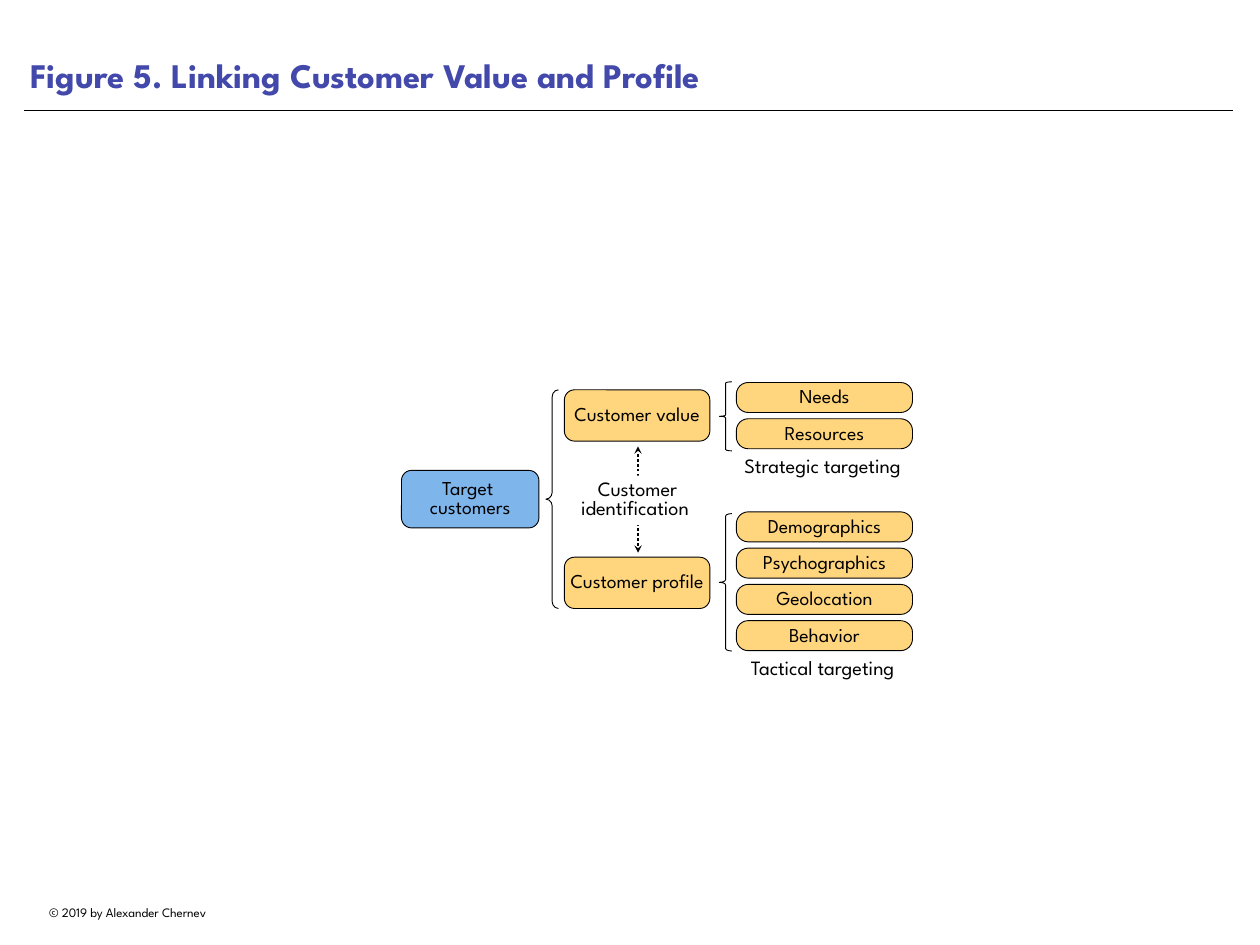
from lxml.etree import SubElement
from pptx import Presentation
from pptx.dml.color import RGBColor
from pptx.enum.shapes import MSO_CONNECTOR as Connector, MSO_SHAPE as Shape
from pptx.enum.text import MSO_ANCHOR as Anchor, PP_ALIGN as Align
from pptx.oxml.ns import qn
from pptx.util import Cm, Pt

COLORS = {"ink": "000000", "title": "4349AA", "target": "7EB5EA", "box": "FFD67E", "paper": "FFFFFF"}
FONT = "League Spartan"
LEAF_PITCH = 1.04
LEAF_GROUPS = [
    (10.97, ["Needs", "Resources"]),
    (14.68, ["Demographics", "Psychographics", "Geolocation", "Behavior"]),
]


def color(name):
    """Return the named colour."""
    return RGBColor.from_string(COLORS[name])


def write_text(shape, text, size=16, ink="ink", bold=False, align=Align.CENTER,
               anchor=Anchor.MIDDLE, spacing=0.8, inset=0, wrap=True):
    """Fill a shape with one formatted paragraph per line of text."""
    frame = shape.text_frame
    frame.word_wrap = wrap
    frame.vertical_anchor = anchor
    frame.margin_left = frame.margin_right = Cm(inset)
    frame.margin_top = frame.margin_bottom = Cm(inset)
    frame.text = text
    for paragraph in frame.paragraphs:
        paragraph.alignment = align
        paragraph.line_spacing = spacing
        font = paragraph.runs[0].font
        font.name, font.size, font.bold = FONT, Pt(size), bold
        font.color.rgb = color(ink)


def add_label(slide, text, left, top, width, height, **text_format):
    """Add a text box."""
    label = slide.shapes.add_textbox(Cm(left), Cm(top), Cm(width), Cm(height))
    write_text(label, text, **text_format)


def add_figure(slide, kind, left, top, width, height, fill=None, outline=True, adjust=None):
    """Add a preset shape with a thin outline."""
    shape = slide.shapes.add_shape(kind, Cm(left), Cm(top), Cm(width), Cm(height))
    shape.shadow.inherit = False
    if adjust is not None:
        shape.adjustments[0] = adjust
    if fill:
        shape.fill.solid()
        shape.fill.fore_color.rgb = color(fill)
    else:
        shape.fill.background()
    if outline:
        shape.line.color.rgb = color("ink")
        shape.line.width = Pt(0.75)
    else:
        shape.line.fill.background()
    return shape


def add_box(slide, text, left, top, width, height, fill="box", radius=0.29, spacing=0.8):
    """Add a rounded box with a corner radius in cm."""
    box = add_figure(slide, Shape.ROUNDED_RECTANGLE, left, top, width, height, fill,
                     adjust=radius / height)
    write_text(box, text, spacing=spacing)


def add_brace(slide, left, top, height, curl):
    """Add a left brace."""
    add_figure(slide, Shape.LEFT_BRACE, left, top, 0.36, height, adjust=curl)


def add_line(slide, start, end, width, dotted_arrow=False):
    """Add a plain line, or a dotted one with arrowheads at both ends."""
    points = [Cm(value) for value in (*start, *end)]
    line = slide.shapes.add_connector(Connector.STRAIGHT, *points)
    line.line.color.rgb = color("ink")
    line.line.width = Pt(width)
    properties = line._element.spPr
    if dotted_arrow:
        stroke = properties.find(qn("a:ln"))
        SubElement(stroke, qn("a:prstDash"), val="sysDot")
        for tip in ("a:headEnd", "a:tailEnd"):
            SubElement(stroke, qn(tip), type="stealth")
    SubElement(properties, qn("a:effectLst"))


def main():
    """Build and save the slide."""
    presentation = Presentation()
    presentation.slide_width, presentation.slide_height = Cm(36.12), Cm(27.1)
    slide = presentation.slides.add_slide(presentation.slide_layouts[6])

    add_label(slide, "© 2019 by Alexander Chernev", 0.69, 25.81, 5.94, 0.71,
              size=10.5, spacing=1, wrap=False)
    add_line(slide, (0.69, 3.15), (35.36, 3.15), 0.5)
    add_label(slide, "Figure 5. Linking Customer Value and Profile", 0.69, 0, 34.65, 2.92,
              size=28, ink="title", bold=True, align=Align.LEFT, anchor=Anchor.BOTTOM,
              spacing=1, inset=0.18)

    add_box(slide, "Target \ncustomers", 11.51, 13.49, 3.94, 1.65, fill="target")
    add_brace(slide, 15.65, 11.18, 6.27, 0.55)

    add_line(slide, (18.29, 15.85), (18.29, 12.8), 2, dotted_arrow=True)
    identification = add_figure(slide, Shape.RECTANGLE, 16.18, 13.64, 4.19, 1.42,
                                fill="paper", outline=False)
    write_text(identification, "Customer identification ", size=16.5)
    for text, top in (("Customer value", 11.18), ("Customer profile", 15.98)):
        add_box(slide, text, 16.18, top, 4.17, 1.47)

    add_brace(slide, 20.62, 10.95, 1.98, 0.11)
    add_brace(slide, 20.62, 14.73, 3.94, 0.2)
    for first_top, names in LEAF_GROUPS:
        for row, name in enumerate(names):
            add_box(slide, name, 21.11, first_top + row * LEAF_PITCH, 5.05, 0.86,
                    radius=0.34, spacing=0.9)
    for text, top in (("Strategic targeting", 13.13), ("Tactical targeting", 18.92)):
        add_label(slide, text, 20.75, top, 5.66, 1.35, size=16.5, anchor=Anchor.TOP)

    presentation.save("out.pptx")


if __name__ == "__main__":
    main()
